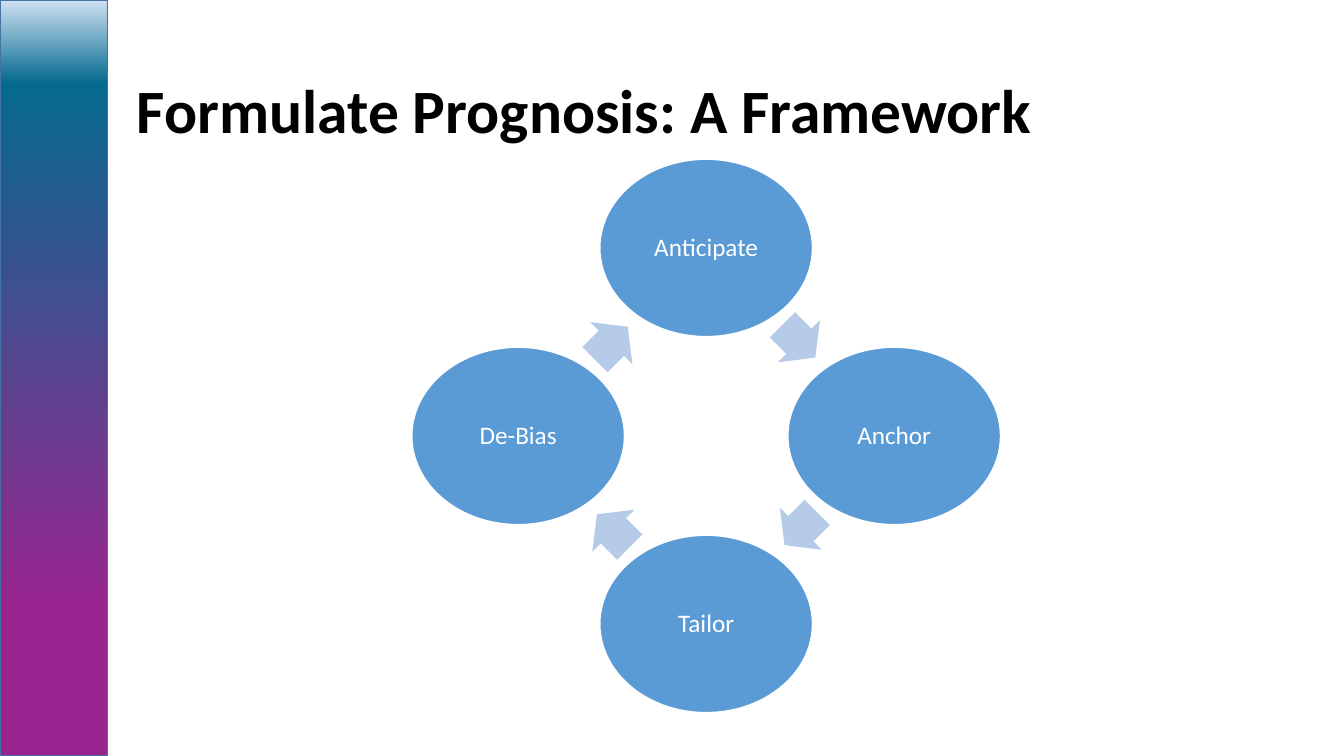
import copy
import math
from dataclasses import dataclass

import pptx
import pptx.dml.color
import pptx.enum.shapes
import pptx.enum.text
import pptx.util

Pt = pptx.util.Pt
RGB = pptx.dml.color.RGBColor.from_string
SHAPE = pptx.enum.shapes.MSO_SHAPE
ALIGN = pptx.enum.text.PP_ALIGN


@dataclass(frozen=True)
class Theme:
    font: str = "Calibri"
    title_size: int = 44
    label_size: int = 18
    title: str = "000000"
    label: str = "FFFFFF"
    outline: str = "FFFFFF"
    step: str = "5B9BD5"
    arrow: str = "B5CBE7"
    band_line: str = "43739E"
    band_stops: tuple = ((0.2, "98258F"), (0.89, "056A8F"), (1, "CEE1F2"))


THEME = Theme()
STEPS = ["Anticipate", "Anchor", "Tailor", "De-Bias"]
CENTER_X, CENTER_Y, RADIUS = 504.4, 311.4, 134.3
STEP_W, STEP_H = 151.9, 126.7
ARROW_W, ARROW_H = 33.1, 42.5
ARROW_RADIUS, ARROW_LAG = 94.7, 0.6  # lag in degrees behind the midpoint


def add_shape(slide, kind, x, y, w, h, line=None):
    s = slide.shapes.add_shape(kind, Pt(x), Pt(y), Pt(w), Pt(h))
    s.shadow.inherit = False
    if line:
        s.line.color.rgb = RGB(line)
        s.line.width = Pt(1)
    else:
        s.line.fill.background()
    return s


def set_text(s, text, size, color, align, bold=False):
    tf = s.text_frame
    tf.word_wrap = True
    tf.vertical_anchor = pptx.enum.text.MSO_ANCHOR.MIDDLE
    p = tf.paragraphs[0]
    p.text = text
    p.alignment = align
    p.line_spacing = 0.9
    p.font.name = THEME.font
    p.font.size = Pt(size)
    p.font.bold = bold
    p.font.color.rgb = RGB(color)


def add_band(slide):
    s = add_shape(slide, SHAPE.RECTANGLE, 0, 0, 77, 540, THEME.band_line)
    s.fill.gradient()
    s.fill.gradient_angle = 90
    # A new gradient has two stops; add the third
    stop_list = s._element.spPr.xpath("a:gradFill/a:gsLst")[0]
    stop_list.append(copy.deepcopy(stop_list[-1]))
    for stop, (position, color) in zip(s.fill.gradient_stops, THEME.band_stops):
        stop.position = position
        stop.color.rgb = RGB(color)


def add_title(slide, text):
    s = slide.shapes.add_textbox(Pt(90.7), Pt(28.8), Pt(838), Pt(104.4))
    set_text(s, text, THEME.title_size, THEME.title, ALIGN.LEFT, bold=True)


def add_step(slide, text, cx, cy):
    s = add_shape(slide, SHAPE.OVAL, cx - STEP_W / 2, cy - STEP_H / 2,
                  STEP_W, STEP_H, THEME.outline)
    s.fill.solid()
    s.fill.fore_color.rgb = RGB(THEME.step)
    tf = s.text_frame
    tf.margin_left = tf.margin_right = tf.margin_top = tf.margin_bottom = Pt(2)
    set_text(s, text, THEME.label_size, THEME.label, ALIGN.CENTER)


def add_arrow(slide, cx, cy, rotation):
    s = add_shape(slide, SHAPE.RIGHT_ARROW, cx - ARROW_W / 2, cy - ARROW_H / 2,
                  ARROW_W, ARROW_H)
    s.adjustments[0], s.adjustments[1] = 0.6, 0.5
    s.rotation = rotation
    s.fill.solid()
    s.fill.fore_color.rgb = RGB(THEME.arrow)


def on_circle(radius, degrees):
    """Point on the cycle, clockwise from the top."""
    a = math.radians(degrees)
    return CENTER_X + radius * math.sin(a), CENTER_Y - radius * math.cos(a)


def add_cycle(slide, steps):
    turn = 360 / len(steps)
    for i, text in enumerate(steps):
        add_step(slide, text, *on_circle(RADIUS, i * turn))
        middle = (i + 0.5) * turn
        add_arrow(slide, *on_circle(ARROW_RADIUS, middle - ARROW_LAG), middle)


def main():
    prs = pptx.Presentation()
    prs.slide_width, prs.slide_height = Pt(960), Pt(540)
    slide = prs.slides.add_slide(prs.slide_layouts[6])

    # Side band and title
    add_band(slide)
    add_title(slide, "Formulate Prognosis: A Framework")

    # Cycle of steps
    add_cycle(slide, STEPS)

    prs.save("out.pptx")


if __name__ == "__main__":
    main()
